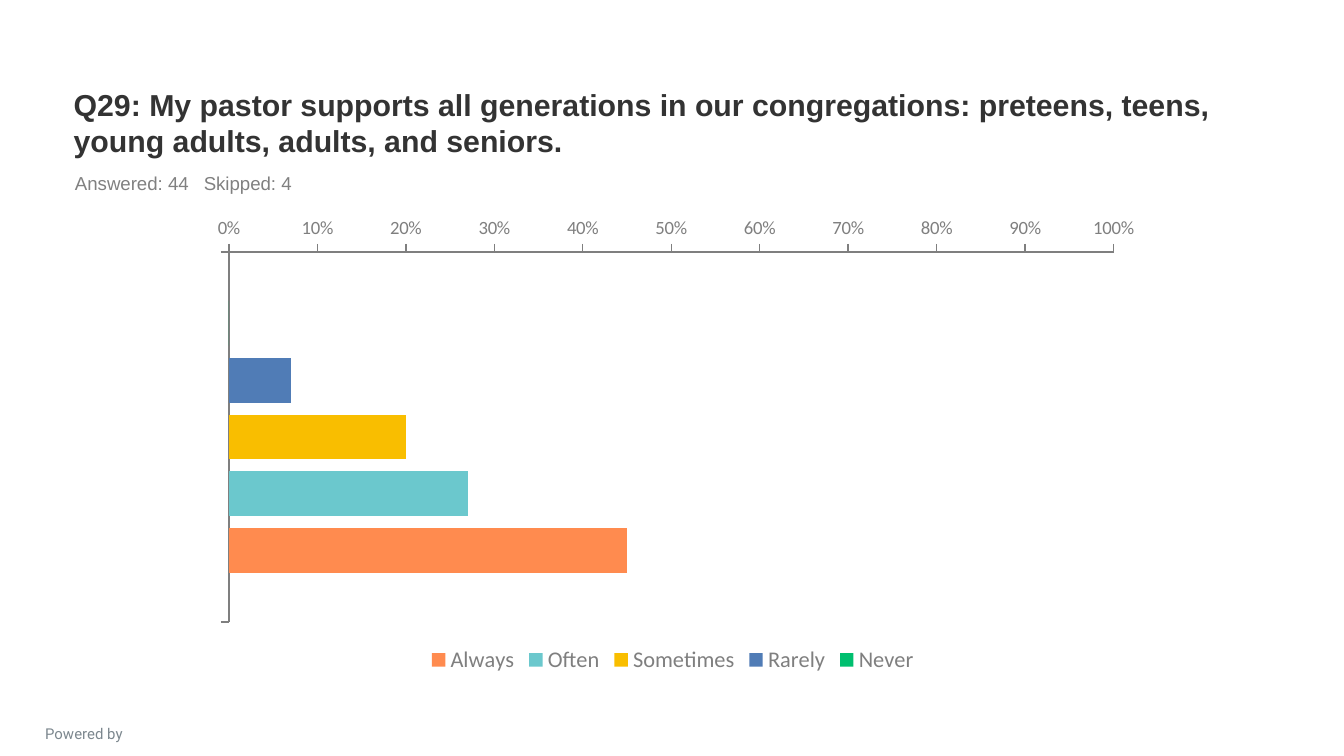
from lxml import etree
from pptx import Presentation
from pptx.chart import data as cd
from pptx.dml.color import RGBColor
from pptx.enum import chart as ch, text as tx
from pptx.oxml import ns
from pptx.util import Pt

INK = RGBColor(0x33, 0x33, 0x33)
GRAY = RGBColor(0x80, 0x80, 0x80)
AXIS = RGBColor(0x7F, 0x7F, 0x7F)
SLATE = RGBColor(0x7C, 0x87, 0x8E)
WHITE = RGBColor(0xFF, 0xFF, 0xFF)
GREEN = RGBColor(0x00, 0xBF, 0x6F)
BLUE = RGBColor(0x50, 0x7C, 0xB6)
GOLD = RGBColor(0xF9, 0xBE, 0x00)
TEAL = RGBColor(0x6B, 0xC8, 0xCD)
CORAL = RGBColor(0xFF, 0x8B, 0x4F)

# Answer, share, colour
ROWS = [
    ("Never", 0, GREEN),
    ("Rarely", 0.07, BLUE),
    ("Sometimes", 0.2, GOLD),
    ("Often", 0.27, TEAL),
    ("Always", 0.45, CORAL),
]


class Deck:
    face = "Arial"
    plot_face = "Calibri"

    def __init__(self, wide, high):
        self.prs = Presentation()
        self.prs.slide_width, self.prs.slide_height = Pt(wide), Pt(high)
        self.slide = self.prs.slides.add_slide(self.prs.slide_layouts[6])
        fill = self.slide.background.fill
        fill.solid()
        fill.fore_color.rgb = WHITE

    def font(self, font, size, color, face, bold=False):
        font.size, font.name, font.bold = Pt(size), face, bold
        font.color.rgb = color

    def label(self, box, words, size, color, face=face, bold=False,
              align=tx.PP_ALIGN.LEFT, anchor=tx.MSO_ANCHOR.TOP, tab=None):
        frame = self.slide.shapes.add_textbox(*map(Pt, box)).text_frame
        frame.word_wrap = True
        frame.vertical_anchor = anchor
        frame.text = words
        para = frame.paragraphs[0]
        para.alignment = align
        if tab:
            stops = etree.SubElement(para._p.get_or_add_pPr(), ns.qn("a:tabLst"))
            etree.SubElement(stops, ns.qn("a:tab"), pos=str(Pt(tab)), algn="l")
        for run in para.runs:
            self.font(run.font, size, color, face, bold)

    def axis(self, axis):
        axis.has_major_gridlines = False
        axis.major_tick_mark = ch.XL_TICK_MARK.OUTSIDE
        axis.minor_tick_mark = ch.XL_TICK_MARK.NONE
        axis.format.line.color.rgb = AXIS
        axis.format.line.width = Pt(0.75)
        self.font(axis.tick_labels.font, 10, AXIS, self.plot_face)

    def bars(self, box, rows):
        data = cd.CategoryChartData(number_format="0%")
        data.categories = [" "]
        for name, share, _ in rows:
            data.add_series(name, [share])
        chart = self.slide.shapes.add_chart(
            ch.XL_CHART_TYPE.BAR_CLUSTERED, *map(Pt, box), data).chart
        chart.has_title = False
        self.font(chart.font, 18, INK, self.plot_face)

        # Bars
        plot = chart.plots[0]
        plot.vary_by_categories = False
        plot.gap_width, plot.overlap = 219, -27
        for bar, (_, _, color) in zip(plot.series, rows):
            bar.invert_if_negative = False
            bar.format.fill.solid()
            bar.format.fill.fore_color.rgb = color

        # Axes: first series on top, scale at the bottom
        cat, val = chart.category_axis, chart.value_axis
        self.axis(cat)
        self.axis(val)
        cat.reverse_order = True
        cat.crosses = ch.XL_AXIS_CROSSES.MINIMUM
        cat.tick_label_position = ch.XL_TICK_LABEL_POSITION.LOW
        val.minimum_scale, val.maximum_scale, val.major_unit = 0, 1, 0.1
        val.tick_labels.number_format = "0%"
        val.tick_labels.number_format_is_linked = False

        # Legend
        chart.has_legend = True
        chart.legend.position = ch.XL_LEGEND_POSITION.BOTTOM
        chart.legend.include_in_layout = False
        self.font(chart.legend.font, 12, AXIS, self.plot_face)


def main():
    deck = Deck(720, 405)

    # Footer
    deck.label((3.6, 384.5, 82.8, 13), "Powered by", 8, SLATE, "Roboto",
               align=tx.PP_ALIGN.CENTER)

    # Question and response count
    deck.label((32.4, 45.4, 648, 43.2),
               "Q29: My pastor supports all generations in our congregations: "
               "preteens, teens, young adults, adults, and seniors.",
               16.2, INK, bold=True, anchor=tx.MSO_ANCHOR.BOTTOM)
    deck.label((33.1, 88.6, 648, 18.7), "Answered: 44\tSkipped: 4", 10, GRAY,
               tab=69)

    # Answers
    deck.bars((103, 111.6, 514.8, 252), ROWS)

    deck.prs.save("out.pptx")


if __name__ == "__main__":
    main()
